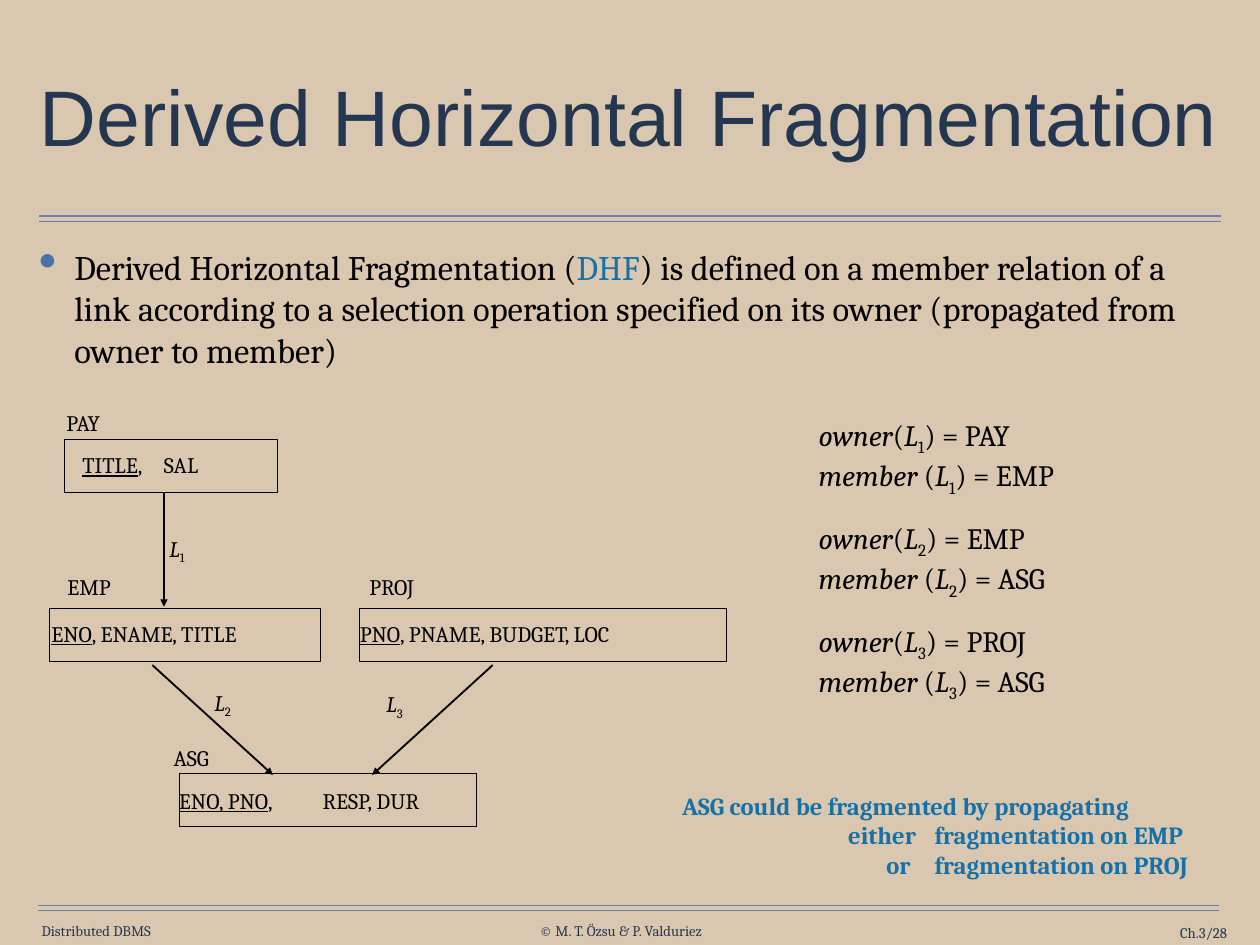
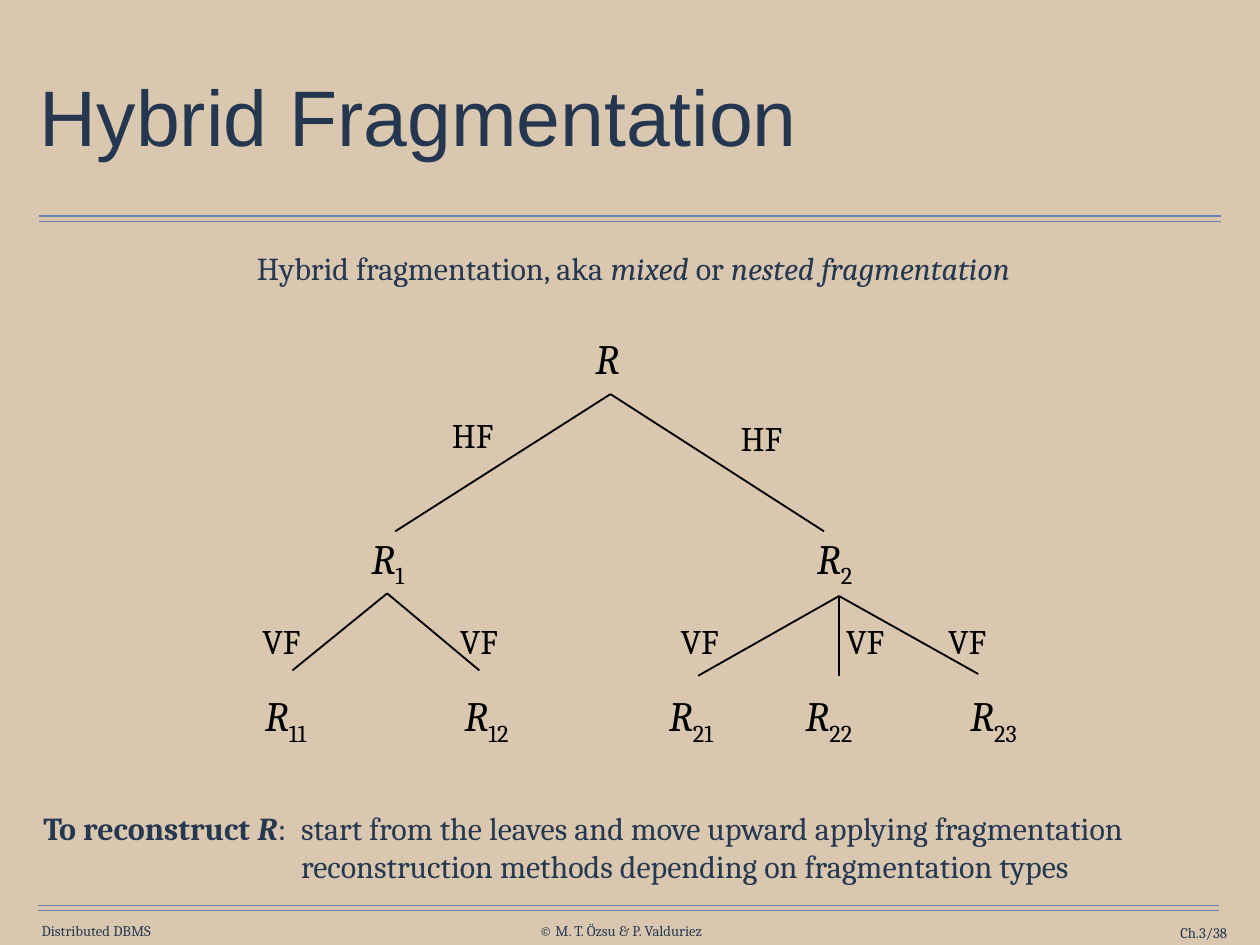
from dataclasses import dataclass

from lxml.etree import SubElement
from pptx import Presentation
from pptx.dml.color import RGBColor
from pptx.enum.shapes import MSO_CONNECTOR, MSO_SHAPE
from pptx.enum.text import MSO_ANCHOR, MSO_AUTO_SIZE, PP_ALIGN
from pptx.oxml.ns import qn
from pptx.util import Pt

PX = 9144  # 100 px to the inch


@dataclass(frozen=True)
class Theme:
    background: str = "D9C8AF"
    title: str = "253750"
    text: str = "263750"
    ink: str = "000000"
    accent: str = "1771A9"
    bullet: str = "4A71A9"
    rule: str = "6682AA"
    title_font: str = "Arial"
    body_font: str = "Cambria"
    title_size: int = 64
    node_size: int = 34
    body_size: int = 28
    lead_size: int = 26
    formula_size: int = 24
    note_size: int = 20
    label_size: int = 18
    footer_size: int = 12


THEME = Theme()


def write(slide, box, paragraphs, size, color=THEME.ink, inset=(10, 5), wrap=False,
          align=PP_ALIGN.LEFT, anchor=MSO_ANCHOR.TOP, gap=0, tabs=(), bullet=False, bold=None):
    """Add a text box; a run is a string or (text, style) with style i, b, u, _ (subscript) or #RRGGBB."""
    frame = slide.shapes.add_textbox(*(n * PX for n in box)).text_frame
    frame.word_wrap = wrap
    frame.vertical_anchor = anchor
    frame.margin_left = frame.margin_right = inset[0] * PX
    frame.margin_top = frame.margin_bottom = inset[1] * PX
    for index, runs in enumerate(paragraphs):
        paragraph = frame.add_paragraph() if index else frame.paragraphs[0]
        paragraph.alignment = align
        if index and gap:
            paragraph.space_before = Pt(gap)
        properties = paragraph._p.get_or_add_pPr()
        if bullet:
            properties.set("marL", str(40 * PX))
            properties.set("indent", str(-40 * PX))
            SubElement(SubElement(properties, qn("a:buClr")), qn("a:srgbClr"), val=THEME.bullet)
            SubElement(properties, qn("a:buSzPct"), val="150000")
            SubElement(properties, qn("a:buChar"), char="•")
        if tabs:
            stops = SubElement(properties, qn("a:tabLst"))
            for position, side in tabs:
                SubElement(stops, qn("a:tab"), pos=str(position * PX), algn=side)
        paragraph.font.name = THEME.body_font
        paragraph.font.size = Pt(size)
        paragraph.font.bold = bold
        paragraph.font.color.rgb = RGBColor.from_string(color)
        for item in runs:
            text, style = (item, "") if isinstance(item, str) else item
            for number, line in enumerate(text.split("\n")):
                if number:
                    paragraph.add_line_break()
                if not line:
                    continue
                run = paragraph.add_run()
                run.text = line
                if style.startswith("#"):
                    run.font.color.rgb = RGBColor.from_string(style[1:])
                    continue
                if "i" in style:
                    run.font.italic = True
                if "b" in style:
                    run.font.bold = True
                if "u" in style:
                    run.font.underline = True
                if "_" in style:
                    run._r.get_or_add_rPr().set("baseline", "-25000")


def draw_line(slide, start, end, color=THEME.ink, width=1.5, arrow=False):
    line = slide.shapes.add_connector(MSO_CONNECTOR.STRAIGHT, *(n * PX for n in (*start, *end)))
    line.line.color.rgb = RGBColor.from_string(color)
    line.line.width = Pt(width)
    if arrow:
        SubElement(line.line._get_or_add_ln(), qn("a:tailEnd"), type="triangle")
    SubElement(line._element.spPr, qn("a:effectLst"))


prs = Presentation()
prs.slide_width, prs.slide_height = 1422 * PX, 1067 * PX
master_fill = prs.slide_master.background.fill
master_fill.solid()
master_fill.fore_color.rgb = RGBColor.from_string(THEME.background)

# Shared frame: title, double rules, footer
slides = []
for heading, page in (("Derived Horizontal Fragmentation", "Ch.3/28"),
                      ("Hybrid Fragmentation", "Ch.3/38")):
    slide = prs.slides.add_slide(prs.slide_layouts[5])
    slides.append(slide)
    title = slide.shapes.title
    title.left, title.top, title.width, title.height = (n * PX for n in (39, 49, 1344, 176))
    title.text = heading
    frame = title.text_frame
    frame.auto_size = MSO_AUTO_SIZE.NONE
    frame.word_wrap = True
    frame.vertical_anchor = MSO_ANCHOR.MIDDLE
    frame.margin_left = frame.margin_right = frame.margin_top = frame.margin_bottom = 6 * PX
    paragraph = frame.paragraphs[0]
    paragraph.alignment = PP_ALIGN.LEFT
    paragraph.line_spacing = 0.9
    paragraph.font.name = THEME.title_font
    paragraph.font.size = Pt(THEME.title_size)
    paragraph.font.color.rgb = RGBColor.from_string(THEME.title)

    for left, right, top in ((44, 1378, 244), (43, 1376, 1022)):
        for y in (top, top + 6):
            draw_line(slide, (left, y), (right, y), THEME.rule, 1)
    for text, box, align in (
        ("Distributed DBMS", (47, 1041, 138, 20), PP_ALIGN.LEFT),
        ("© M. T. Özsu & P. Valduriez", (609, 1041, 208, 20), PP_ALIGN.LEFT),
        (page, (1231, 1043, 154, 20), PP_ALIGN.RIGHT),
    ):
        write(slide, box, [[text]], THEME.footer_size, THEME.text, inset=(0, 0),
              align=align, anchor=MSO_ANCHOR.MIDDLE)

derived, hybrid = slides

# Derived horizontal fragmentation
write(derived, (38, 272, 1344, 160), [[
    "Derived Horizontal Fragmentation (", ("DHF", "#" + THEME.accent),
    ") is defined on a member relation of a link according to a selection operation "
    "specified on its owner (propagated from owner to member)",
]], THEME.body_size, inset=(6, 6), wrap=True, bullet=True)

for left, top, width in ((73, 496, 240), (56, 687, 306), (203, 873, 335), (406, 687, 414)):
    relation = derived.shapes.add_shape(
        MSO_SHAPE.RECTANGLE, *(n * PX for n in (left, top, width, 60)))
    relation.shadow.inherit = False
    relation.fill.background()
    relation.line.color.rgb = RGBColor.from_string(THEME.ink)
    relation.line.width = Pt(1)

for left, top, width, runs in (
    (61, 455, 96, ["PAY"]),
    (79, 503, 125, [("TITLE", "u"), ","]),
    (171, 503, 92, ["SAL"]),
    (62, 640, 99, ["EMP"]),
    (44, 693, 329, [("ENO", "u"), ", ENAME, TITLE"]),
    (403, 640, 106, ["PROJ"]),
    (392, 693, 448, [("PNO", "u"), ", PNAME, BUDGET, LOC"]),
    (182, 834, 96, ["ASG"]),
    (188, 882, 191, [("ENO, PNO", "u"), ","]),
    (350, 882, 188, ["RESP, DUR"]),
    (177, 597, 61, [("L", "i"), ("1", "_")]),
    (228, 771, 61, [("L", "i"), ("2", "_")]),
    (422, 773, 61, [("L", "i"), ("3", "_")]),
):
    write(derived, (left, top, width, 53), [runs], THEME.label_size, inset=(14, 7))

for start, end in (((185, 556), (185, 685)), ((172, 751), (308, 875)), ((556, 751), (420, 875))):
    draw_line(derived, start, end, arrow=True)

links = []
for number, owner, member in (("1", "PAY", "EMP"), ("2", "EMP", "ASG"), ("3", "PROJ", "ASG")):
    link = [("L", "i"), (number, "_")]
    links.append([("owner", "i"), "(", *link, f") = {owner}\n",
                  ("member ", "i"), "(", *link, f") = {member}"])
write(derived, (914, 466, 298, 303), links, THEME.formula_size, gap=18)

write(derived, (760, 888, 624, 111), [[
    "ASG could be fragmented by propagating\n"
    "\teither\tfragmentation on EMP\n"
    "\tor \tfragmentation on PROJ",
]], THEME.note_size, THEME.accent, wrap=True, tabs=((264, "r"), (285, "l")), bold=True)

# Hybrid fragmentation
write(hybrid, (55, 276, 1320, 54), [[
    "Hybrid fragmentation, aka ", ("mixed", "i"), " or ", ("nested fragmentation", "i"),
]], THEME.lead_size, THEME.text, wrap=True, align=PP_ALIGN.CENTER)

for left, top, width, subscript in (
    (658, 369, 70, ""),
    (405, 594, 81, "1"), (908, 594, 81, "2"),
    (285, 772, 94, "11"), (510, 772, 99, "12"),
    (741, 772, 99, "21"), (895, 772, 99, "22"), (1081, 772, 99, "23"),
):
    runs = [("R", "i")] + ([(subscript, "_")] if subscript else [])
    write(hybrid, (left, top, width, 71), [runs], THEME.node_size, inset=(14, 7))

for method, width, places in (
    ("HF", 83, ((496, 461), (822, 464))),
    ("VF", 79, ((282, 693), (505, 693), (754, 693), (941, 693), (1056, 693))),
):
    for left, top in places:
        write(hybrid, (left, top, width, 61), [[method]], THEME.body_size, inset=(14, 7))

for parent, children in (
    ((689, 445), ((446, 600), (930, 600))),
    ((437, 670), ((330, 757), (541, 757))),
    ((947, 673), ((788, 763), (947, 763), (1104, 761))),
):
    for child in children:
        draw_line(hybrid, parent, child)

write(hybrid, (39, 908, 323, 54), [[
    ("To reconstruct ", "b"), ("R", "bi"), ":",
]], THEME.lead_size, THEME.text)
write(hybrid, (330, 908, 1055, 98), [[
    "start from the leaves and move upward applying fragmentation "
    "reconstruction methods depending on fragmentation types",
]], THEME.lead_size, THEME.text, wrap=True)

prs.save("out.pptx")
